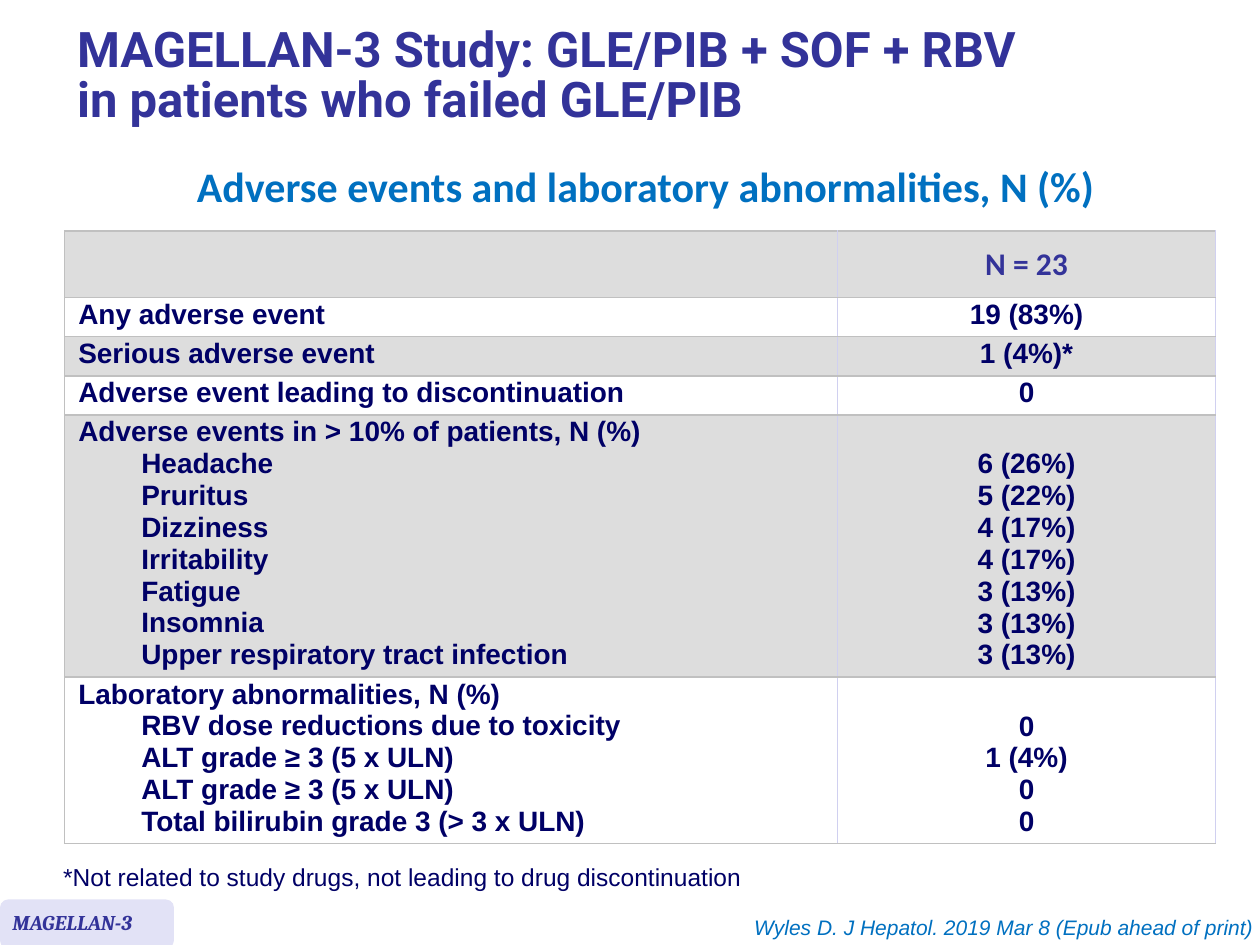
from lxml import etree
from pptx import Presentation
from pptx.dml.color import RGBColor
from pptx.enum.shapes import MSO_SHAPE
from pptx.enum.text import MSO_ANCHOR, PP_ALIGN
from pptx.oxml.ns import qn
from pptx.util import Pt

LEFT, CENTER, RIGHT = PP_ALIGN.LEFT, PP_ALIGN.CENTER, PP_ALIGN.RIGHT
TOP, MIDDLE, BOTTOM = MSO_ANCHOR.TOP, MSO_ANCHOR.MIDDLE, MSO_ANCHOR.BOTTOM
ROUNDED = MSO_SHAPE.ROUNDED_RECTANGLE

COLORS = {
    "indigo": "333399", "navy": "000066", "blue": "0070C0",
    "band": "DDDDDD", "white": "FFFFFF", "badge": "E2E2F6",
    "border": "C0C0C0", "divider": "D0D0F0",
}
TITLE = {"name": "Roboto", "size": Pt(28), "bold": True}
SUBTITLE = {"name": "Calibri", "size": Pt(24), "bold": True}
HEADER = {"name": "Calibri", "size": Pt(18), "bold": True}
BODY = {"name": "Arial", "size": Pt(16), "bold": True}
FOOTNOTE = {"name": "Arial", "size": Pt(14)}
BADGE = {"name": "Cambria", "size": Pt(12), "bold": True, "italic": True}
CITATION = {"name": "Arial", "size": Pt(12), "italic": True}


def write_paragraph(paragraph, text, font_format, color, layout):
    for name, value in layout.items():
        setattr(paragraph, name, value)
    paragraph.text = text
    for name, value in font_format.items():
        setattr(paragraph.font, name, value)
    paragraph.font.color.rgb = RGBColor.from_string(COLORS[color])


def format_cell(cell, fill, borders, anchor):
    cell.vertical_anchor = anchor
    cell.margin_left = cell.margin_right = Pt(7.8)
    properties = cell._tc.get_or_add_tcPr()
    for side, color in borders.items():
        line = etree.SubElement(properties, qn(f"a:ln{side}"), w=str(Pt(1)))
        solid = etree.SubElement(line, qn("a:solidFill"))
        etree.SubElement(solid, qn("a:srgbClr"), val=COLORS[color])
    cell.fill.solid()
    cell.fill.fore_color.rgb = RGBColor.from_string(COLORS[fill])


presentation = Presentation()
presentation.slide_width, presentation.slide_height = Pt(720), Pt(540)
slide = presentation.slides.add_slide(presentation.slide_layouts[6])

badge = slide.shapes.add_shape(ROUNDED, Pt(0), Pt(514), Pt(99.4), Pt(28))
badge.shadow.inherit = False
badge.fill.solid()
badge.fill.fore_color.rgb = RGBColor.from_string(COLORS["badge"])
badge.line.fill.background()

text_boxes = [
    ("MAGELLAN-3 Study: GLE/PIB + SOF + RBV\vin patients who failed GLE/PIB",
     (37, 6, 657, 77), TITLE, "indigo", MIDDLE, {"line_spacing": 0.85}),
    ("Adverse events and laboratory abnormalities, N (%)",
     (29, 102, 680, 25), SUBTITLE, "blue", TOP,
     {"alignment": CENTER, "line_spacing": Pt(15.2)}),
    ("*Not related to study drugs, not leading to drug discontinuation",
     (29, 489, 586, 24), FOOTNOTE, "navy", TOP, {}),
    ("MAGELLAN-3", (0, 516, 99.4, 22), BADGE, "indigo", TOP, {}),
    ("Wyles D. J Hepatol. 2019 Mar 8 (Epub ahead of print)",
     (190, 519, 530, 22), CITATION, "blue", TOP, {"alignment": RIGHT}),
]
for text, bounds, font_format, color, anchor, layout in text_boxes:
    box = slide.shapes.add_textbox(*map(Pt, bounds))
    box.text_frame.word_wrap = True
    box.text_frame.vertical_anchor = anchor
    write_paragraph(box.text_frame.paragraphs[0], text, font_format, color, layout)
    if font_format is CITATION:
        box.text_frame.margin_right = Pt(3.6)

event_groups = [
    [("Any adverse event", "19 (83%)")],
    [("Serious adverse event", "1 (4%)*")],
    [("Adverse event leading to discontinuation", "0")],
    [("Adverse events in > 10% of patients, N (%)", None),
     ("Headache", "6 (26%)"),
     ("Pruritus", "5 (22%)"),
     ("Dizziness", "4 (17%)"),
     ("Irritability", "4 (17%)"),
     ("Fatigue", "3 (13%)"),
     ("Insomnia", "3 (13%)"),
     ("Upper respiratory tract infection", "3 (13%)")],
    [("Laboratory abnormalities, N (%)", None),
     ("RBV dose reductions due to toxicity", "0"),
     ("ALT grade ≥ 3 (5 x ULN)", "1 (4%)"),
     ("ALT grade ≥ 3 (5 x ULN)", "0"),
     ("Total bilirubin grade 3 (> 3 x ULN)", "0")],
]
row_heights = [38] + [18.2 * len(group) + 4.2 for group in event_groups]
frame = slide.shapes.add_table(
    len(row_heights), 2, Pt(37), Pt(132), Pt(657.6), Pt(sum(row_heights)))
table = frame.table
table.first_row = table.horz_banding = False
table.columns[0].width, table.columns[1].width = Pt(441.6), Pt(216)

for row_index, height in enumerate(row_heights):
    table.rows[row_index].height = Pt(height)
    fill = "white" if row_index % 2 else "band"
    for column_index, left_border in enumerate(("border", "divider")):
        borders = {"L": left_border, "R": "divider", "T": "border", "B": "border"}
        anchor = BOTTOM if row_index and column_index else MIDDLE
        format_cell(table.cell(row_index, column_index), fill, borders, anchor)

write_paragraph(table.cell(0, 1).text_frame.paragraphs[0], "N = 23",
                HEADER, "indigo", {"alignment": CENTER})

for row_index, group in enumerate(event_groups, start=1):
    for column_index, alignment in enumerate((LEFT, CENTER)):
        text_frame = table.cell(row_index, column_index).text_frame
        lines = [line[column_index] for line in group if line[column_index]]
        for line_index, text in enumerate(lines):
            paragraph = text_frame.add_paragraph() if line_index else text_frame.paragraphs[0]
            layout = {"alignment": alignment, "line_spacing": Pt(15),
                      "space_before": Pt(3.2 if line_index else 0)}
            if line_index and column_index == 0:
                layout["level"] = 1
                paragraph._p.get_or_add_pPr().set("marL", str(Pt(36)))
            write_paragraph(paragraph, text, BODY, "navy", layout)

presentation.save("out.pptx")
